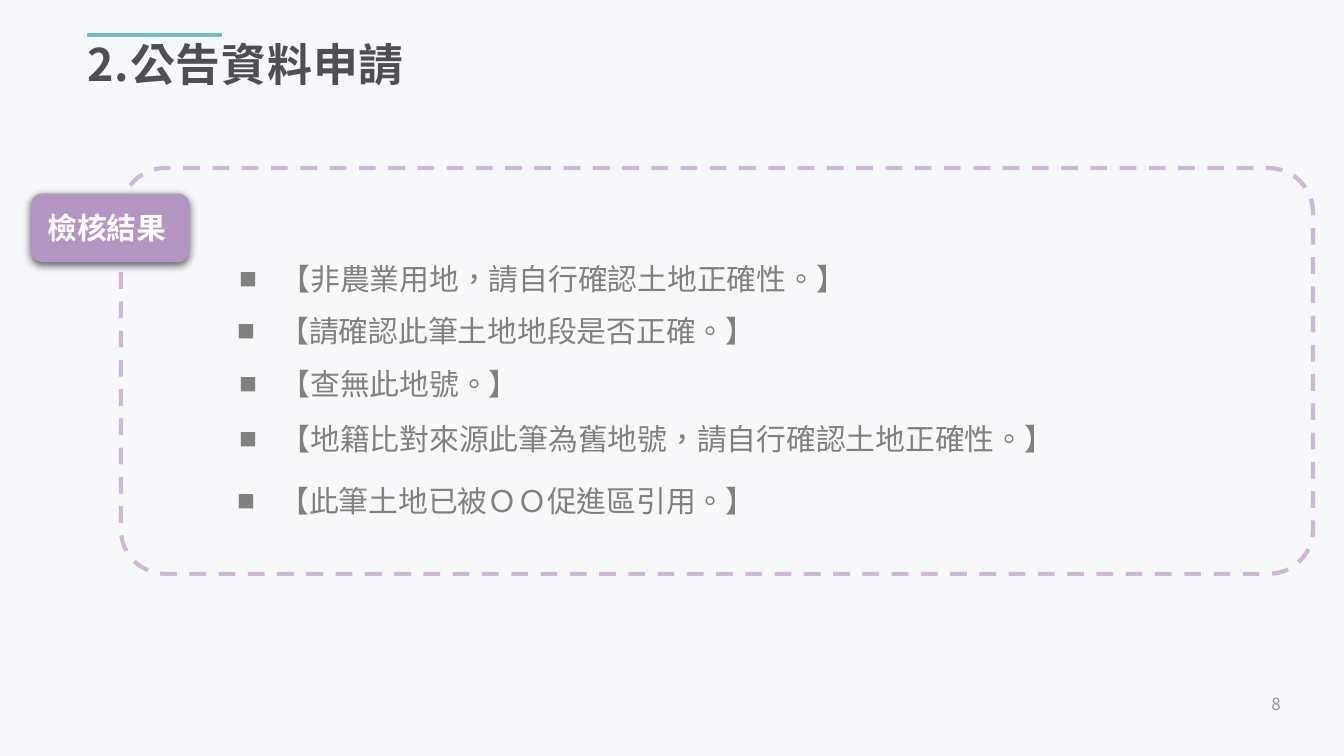
from lxml import etree
from pptx import Presentation
from pptx.dml.color import RGBColor
from pptx.enum.dml import MSO_LINE
from pptx.enum.shapes import MSO_CONNECTOR, MSO_SHAPE
from pptx.enum.text import MSO_ANCHOR, PP_ALIGN
from pptx.oxml import parse_xml
from pptx.oxml.ns import qn
from pptx.util import Inches, Pt

FONT = "Noto Sans CJK SC"
DRAWING_NS = "http://schemas.openxmlformats.org/drawingml/2006/main"
CELL = Inches(0.1)
rgb = RGBColor.from_string


def grid(*cells):
    return [round(cell * CELL) for cell in cells]


def write(shape, text, size, color, bold=False, align=PP_ALIGN.LEFT,
          anchor=MSO_ANCHOR.TOP, inset=None, spacing=None, bullet=None):
    frame = shape.text_frame
    frame.word_wrap = True
    frame.vertical_anchor = anchor
    if inset is not None:
        frame.margin_left = frame.margin_right = inset
        frame.margin_top = frame.margin_bottom = inset
    paragraph = frame.paragraphs[0]
    paragraph.alignment = align
    run = paragraph.add_run()
    run.text = text
    run.font.size = Pt(size)
    run.font.bold = bold
    run.font.name = FONT
    run.font.color.rgb = rgb(color)
    properties = run.font._element
    properties.set("lang", "zh-TW")
    etree.SubElement(properties, qn("a:ea")).set("typeface", FONT)
    if spacing:
        properties.set("spc", str(round(spacing * 100)))
    if bullet:
        indents = paragraph._p.get_or_add_pPr()
        indents.set("marL", str(Inches(0.31)))
        indents.set("indent", str(-Inches(0.31)))
        etree.SubElement(indents, qn("a:buSzPct")).set("val", "60000")
        etree.SubElement(indents, qn("a:buFont")).set("typeface", FONT)
        etree.SubElement(indents, qn("a:buChar")).set("char", bullet)


deck = Presentation()
deck.slide_width = Inches(10)
deck.slide_height = deck.slide_width * 9 // 16
slide = deck.slides.add_slide(deck.slide_layouts[5])
slide.background.fill.solid()
slide.background.fill.fore_color.rgb = rgb("F6F8FA")
shapes = slide.shapes

accent = shapes.add_connector(MSO_CONNECTOR.STRAIGHT, *grid(6.5, 2.6, 16.5, 2.6))
accent.line.color.rgb = rgb("6EBEBE")
accent.line.width = Pt(2.25)
etree.SubElement(accent._element.spPr, qn("a:effectLst"))

page_number = shapes.add_textbox(*grid(93.8, 51.6, 2.3, 1.5))
write(page_number, "8", 9, "91969B", align=PP_ALIGN.CENTER,
      anchor=MSO_ANCHOR.MIDDLE, inset=0, spacing=0.3)

heading = shapes.title
heading.left, heading.top, heading.width, heading.height = grid(6.5, 2.7, 87, 4.2)
write(heading, "2.公告資料申請", 24, "4B5050", bold=True, inset=0, spacing=0.5)

results_frame = shapes.add_shape(MSO_SHAPE.ROUNDED_RECTANGLE, *grid(9, 12.5, 88.7, 30.2))
results_frame.adjustments[0] = 0.11
results_frame.shadow.inherit = False
results_frame.fill.background()
results_frame.line.color.rgb = rgb("CDB8D6")
results_frame.line.width = Pt(2.25)
results_frame.line.dash_style = MSO_LINE.DASH

results_label = shapes.add_shape(MSO_SHAPE.ROUNDED_RECTANGLE, *grid(2.3, 14.4, 11.8, 5.1))
results_label.fill.solid()
results_label.fill.fore_color.rgb = rgb("B395C1")
results_label.line.fill.background()
results_label._element.spPr.append(parse_xml(
    f'<a:effectLst xmlns:a="{DRAWING_NS}">'
    f'<a:outerShdw blurRad="{Pt(4.5)}" dist="{Pt(1.5)}" dir="5400000" rotWithShape="0">'
    '<a:srgbClr val="000000"><a:alpha val="63000"/></a:srgbClr>'
    '</a:outerShdw></a:effectLst>'))
write(results_label, "檢核結果", 16, "FFFFFF", bold=True, anchor=MSO_ANCHOR.MIDDLE)

messages = [
    (16.8, 18.9, "【非農業用地，請自行確認土地正確性。】"),
    (16.7, 22.8, "【請確認此筆土地地段是否正確。】"),
    (16.8, 26.7, "【查無此地號。】"),
    (16.8, 30.8, "【地籍比對來源此筆為舊地號，請自行確認土地正確性。】"),
    (16.7, 35.4, "【此筆土地已被ＯＯ促進區引用。】"),
]
for column, row, message in messages:
    message_line = shapes.add_textbox(*grid(column, row, 73.1, 3.7))
    write(message_line, message, 16, "808080", bullet="■")

deck.save("out.pptx")
